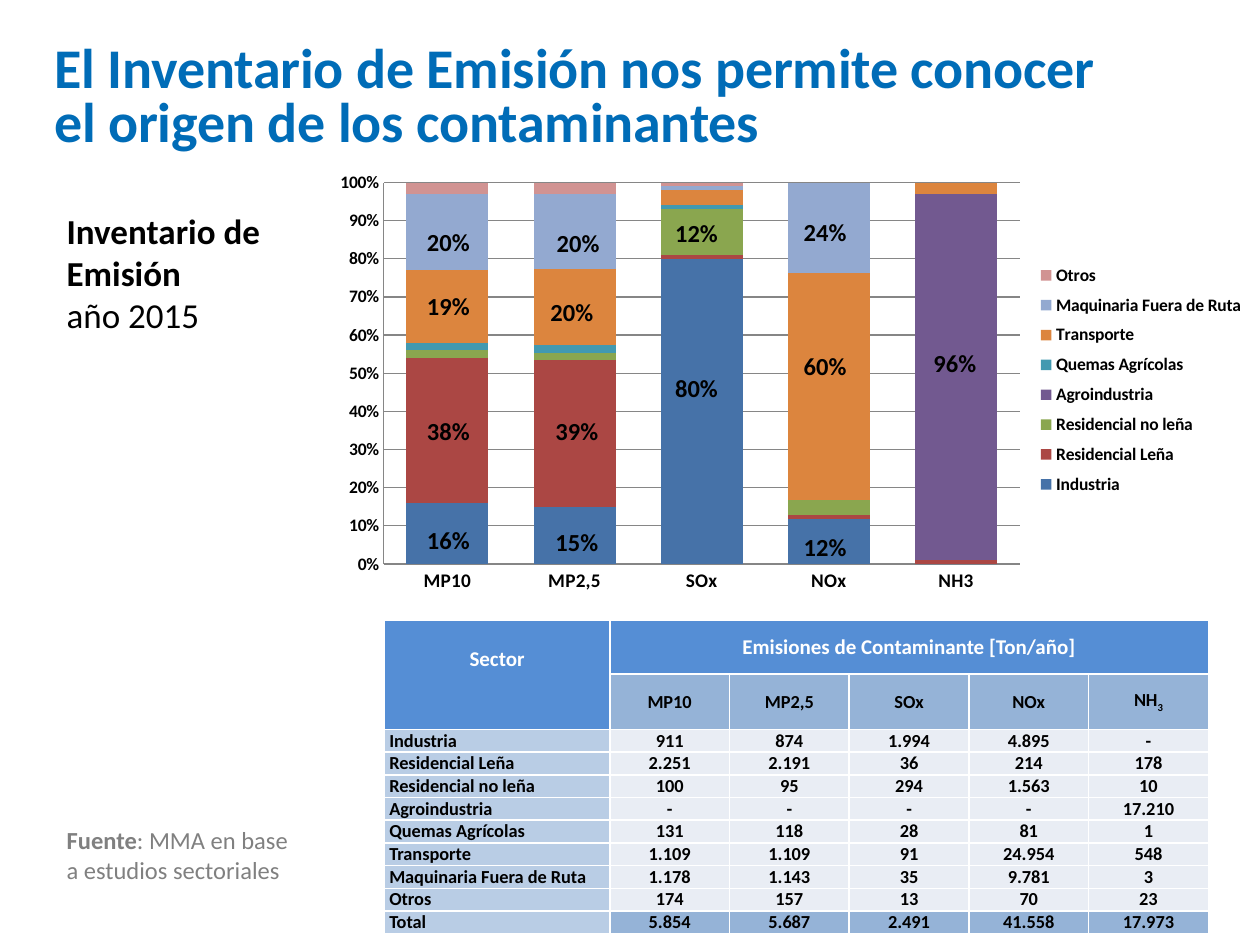
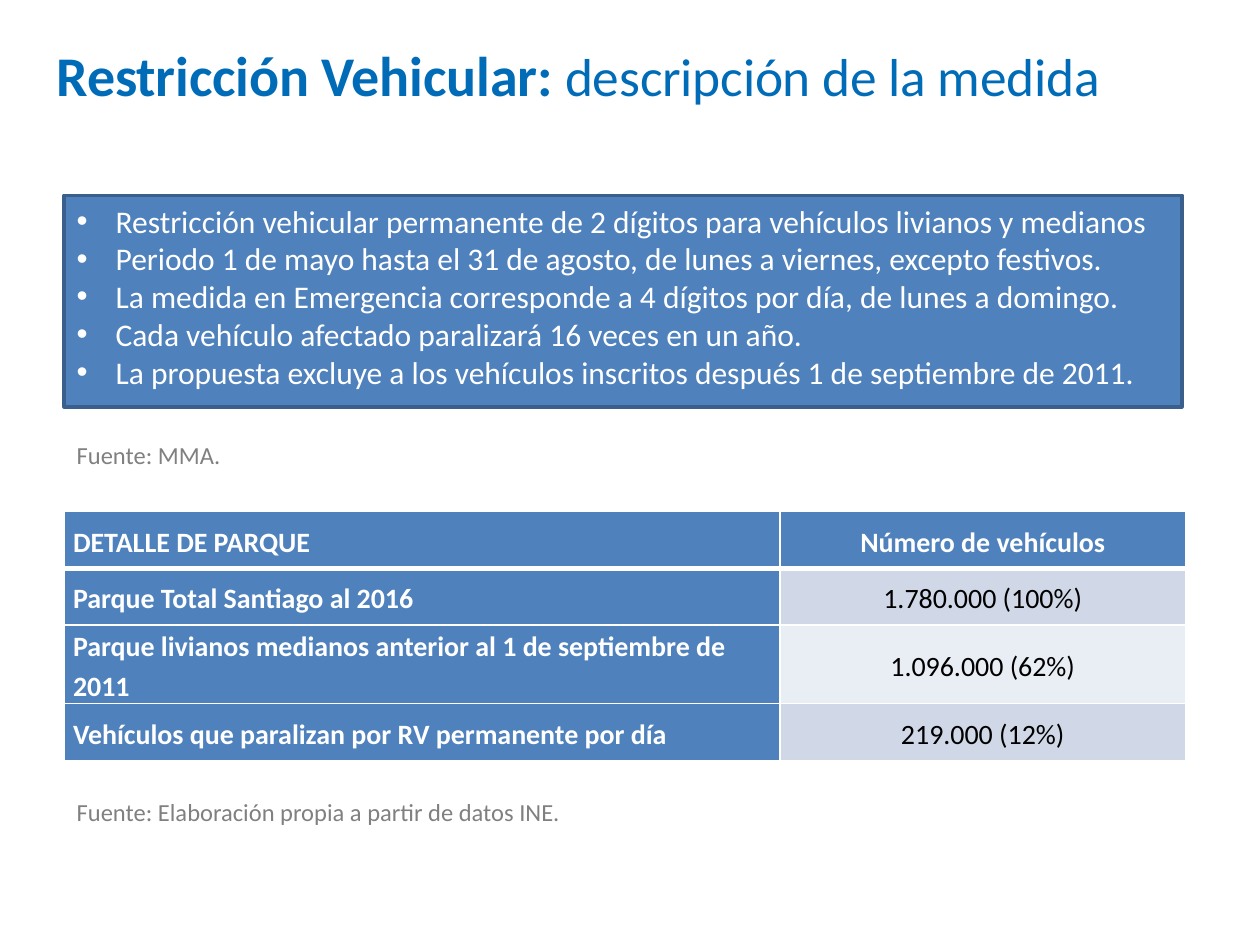
from lxml import etree
from pptx import Presentation
from pptx.chart.data import CategoryChartData
from pptx.dml.color import RGBColor
from pptx.enum import chart as ch, shapes, text
from pptx.oxml.ns import qn
from pptx.util import Inches, Pt

BLACK, WHITE, GREY, TITLE = "000000", "FFFFFF", "808080", "006CB7"
BLUE, HEAD, SUBHEAD, LABEL = "4F81BD", "558ED5", "95B3D7", "B9CDE5"
PALE, BAND, GRID, OUTLINE = "E9EDF4", "D0D8E8", "868686", "3A5F8C"
LEFT, CENTER = text.PP_ALIGN.LEFT, text.PP_ALIGN.CENTER
rgb = RGBColor.from_string


def style(f, size, color, bold=False):
    f.name, f.size, f.bold = "Calibri", Pt(size), bold
    f.color.rgb = rgb(color)


def fill_cell(c, words, fill, size, color, bold, align, side, spacing=1.0):
    c.margin_left = c.margin_right = Inches(side)
    c.margin_top = c.margin_bottom = 0
    c.vertical_anchor = text.MSO_ANCHOR.MIDDLE
    tcPr = c._tc.get_or_add_tcPr()
    for edge in ("lnL", "lnR", "lnT", "lnB"):
        ln = etree.SubElement(tcPr, qn(f"a:{edge}"), w=str(Pt(1)))
        solid = etree.SubElement(ln, qn("a:solidFill"))
        etree.SubElement(solid, qn("a:srgbClr"), val=WHITE)
    c.fill.solid()
    c.fill.fore_color.rgb = rgb(fill)
    p = c.text_frame.paragraphs[0]
    p.alignment, p.line_spacing = align, spacing
    for word in words:
        r = p.add_run()
        r.text = word
        style(r.font, size, color, bold)


prs = Presentation()
prs.slide_width, prs.slide_height = Inches(10), Inches(7.5)

titles = [
    ((0.43, 0.36, 8.32, 0.88), 0.8,
     [("El Inventario de Emisión nos permite conocer el origen de los contaminantes", 32, True)]),
    ((0.45, 0.32, 8.48, 0.54), 1.0,
     [("Restricción Vehicular: ", 32, True), ("descripción de la medida", 30.5, False)]),
]
for box, spacing, runs in titles:
    s = prs.slides.add_slide(prs.slide_layouts[5])
    sp = s.shapes.title
    sp.left, sp.top, sp.width, sp.height = map(Inches, box)
    tf = sp.text_frame
    tf.margin_left = tf.margin_right = tf.margin_top = tf.margin_bottom = 0
    tf.vertical_anchor = text.MSO_ANCHOR.TOP
    tf.auto_size = text.MSO_AUTO_SIZE.NONE
    tf.word_wrap = True
    p = tf.paragraphs[0]
    p.alignment, p.line_spacing = LEFT, spacing
    for words, size, bold in runs:
        r = p.add_run()
        r.text = words
        style(r.font, size, TITLE, bold)
        r._r.get_or_add_rPr().set("spc", "-10")
inventory, restriction = prs.slides

s = inventory
series = [
    ("Industria", (16, 15, 80, 12, 0), "4672A8"),
    ("Residencial Leña", (38, 39, 1, 1, 1), "AB4744"),
    ("Residencial no leña", (2, 2, 12, 4, 0), "8AA64F"),
    ("Agroindustria", (0, 0, 0, 0, 96), "725990"),
    ("Quemas Agrícolas", (2, 2, 1, 0, 0), "4299B0"),
    ("Transporte", (19, 20, 4, 60, 3), "DC853E"),
    ("Maquinaria Fuera de Ruta", (20, 20, 1, 24, 0), "93A9D0"),
    ("Otros", (3, 3, 1, 0, 0), "D19392"),
]
data = CategoryChartData()
data.categories = ["MP10", "MP2,5", "SOx", "NOx", "NH3"]
for name, values, color in series:
    data.add_series(name, values)
chart = s.shapes.add_chart(ch.XL_CHART_TYPE.COLUMN_STACKED_100, Inches(2.58), Inches(1.02),
                           Inches(7.4), Inches(3.73), data).chart
style(chart.font, 10, BLACK, True)
chart.has_title = False
plot = chart.plots[0]
plot.gap_width, plot.overlap, plot.vary_by_categories = 55, 100, False
for ser, (name, values, color) in zip(plot.series, series):
    ser.format.fill.solid()
    ser.format.fill.fore_color.rgb = rgb(color)
for axis, size in ((chart.category_axis, 11), (chart.value_axis, 10)):
    axis.major_tick_mark = axis.minor_tick_mark = ch.XL_TICK_MARK.NONE
    axis.format.line.color.rgb = rgb(GRID)
    style(axis.tick_labels.font, size, BLACK, True)
axis.has_major_gridlines = True
axis.major_gridlines.format.line.color.rgb = rgb(GRID)
axis.tick_labels.number_format = "0%"
axis.tick_labels.number_format_is_linked = False
chart.has_legend = True
chart.legend.position = ch.XL_LEGEND_POSITION.RIGHT
chart.legend.include_in_layout = False
style(chart.legend.font, 10, BLACK, True)
for tag, index, box in (("plotArea", 0, (0.063, 0.115, 0.682, 0.812)),
                        ("legend", 1, (0.75, 0.27, 0.25, 0.53))):
    parent = chart._chartSpace.find(".//" + qn(f"c:{tag}"))
    for old in parent.findall(qn("c:layout")):
        parent.remove(old)
    layout = etree.Element(qn("c:layout"))
    manual = etree.SubElement(layout, qn("c:manualLayout"))
    if tag == "plotArea":
        etree.SubElement(manual, qn("c:layoutTarget"), val="inner")
    for key in ("xMode", "yMode"):
        etree.SubElement(manual, qn(f"c:{key}"), val="edge")
    for key, value in zip("xywh", box):
        etree.SubElement(manual, qn(f"c:{key}"), val=str(value))
    parent.insert(index, layout)

shares = [
    ("20%", 3.29, 1.75), ("20%", 4.32, 1.76), ("19%", 3.29, 2.26), ("20%", 4.27, 2.31),
    ("38%", 3.29, 3.25), ("39%", 4.31, 3.25), ("16%", 3.29, 4.12), ("15%", 4.31, 4.13),
    ("12%", 5.26, 1.68), ("80%", 5.26, 2.91), ("24%", 6.28, 1.67), ("60%", 6.28, 2.74),
    ("12%", 6.28, 4.17), ("96%", 7.31, 2.71),
]
for share, x, y in shares:
    tf = s.shapes.add_textbox(Inches(x), Inches(y), Inches(0.55), Inches(0.34)).text_frame
    tf.word_wrap = False
    tf.text = share
    style(tf.paragraphs[0].runs[0].font, 14, BLACK, True)

emissions = [
    ("Industria", "911", "874", "1.994", "4.895", "-"),
    ("Residencial Leña", "2.251", "2.191", "36", "214", "178"),
    ("Residencial no leña", "100", "95", "294", "1.563", "10"),
    ("Agroindustria", "-", "-", "-", "-", "17.210"),
    ("Quemas Agrícolas", "131", "118", "28", "81", "1"),
    ("Transporte", "1.109", "1.109", "91", "24.954", "548"),
    ("Maquinaria Fuera de Ruta", "1.178", "1.143", "35", "9.781", "3"),
    ("Otros", "174", "157", "13", "70", "23"),
    ("Total", "5.854", "5.687", "2.491", "41.558", "17.973"),
]
t = s.shapes.add_table(11, 6, Inches(3.05), Inches(4.92), Inches(6.54), Inches(2.49)).table
t.first_row = t.horz_banding = False
for i, col in enumerate(t.columns):
    col.width = Inches(0.95 if i else 1.79)
for i, row in enumerate(t.rows):
    row.height = Inches((0.43, 0.44)[i] if i < 2 else 0.18)
for i in range(6):
    words = ["Sector"] if i == 0 else ["Emisiones de Contaminante [Ton/año]"] if i == 1 else []
    fill_cell(t.cell(0, i), words, HEAD, 12, WHITE, True, CENTER, 0.01)
fill_cell(t.cell(1, 0), [], HEAD, 12, WHITE, True, CENTER, 0.01)
t.cell(0, 0).merge(t.cell(1, 0))
t.cell(0, 0).margin_bottom = Inches(0.24)
t.cell(0, 1).merge(t.cell(0, 5))
for i, words in enumerate((["MP10"], ["MP2,5"], ["SOx"], ["NOx"], ["NH", "3"]), 1):
    fill_cell(t.cell(1, i), words, SUBHEAD, 10.5, BLACK, True, CENTER, 0.01)
r = t.cell(1, 5).text_frame.paragraphs[0].runs[1]
r._r.get_or_add_rPr().set("baseline", "-25000")
for i, row in enumerate(emissions, 2):
    for j, value in enumerate(row):
        fill = LABEL if j == 0 else SUBHEAD if row[0] == "Total" else PALE
        fill_cell(t.cell(i, j), [value], fill, 10.5, BLACK, True,
                  CENTER if j else LEFT, 0.01 if j else 0.04)

tf = s.shapes.add_textbox(Inches(0.43), Inches(1.61), Inches(2.05), Inches(5.52)).text_frame
tf.word_wrap = True
lines = [
    ([("Inventario de", True)], 20, BLACK),
    ([("Emisión", True)], 20, BLACK),
    ([("año 2015", False)], 20, BLACK),
    ([("Fuente", True), (": MMA en base", False)], 14, GREY),
    ([("a estudios sectoriales", False)], 14, GREY),
]
for i, (runs, size, color) in enumerate(lines):
    p = tf.add_paragraph() if i else tf.paragraphs[0]
    for words, bold in runs:
        r = p.add_run()
        r.text = words
        style(r.font, size, color, bold)
tf.paragraphs[3].space_before = Pt(280)

s = restriction
sp = s.shapes.add_shape(shapes.MSO_SHAPE.RECTANGLE, Inches(0.51), Inches(1.55),
                        Inches(8.87), Inches(1.68))
sp.shadow.inherit = False
sp.fill.solid()
sp.fill.fore_color.rgb = rgb(BLUE)
sp.line.color.rgb = rgb(OUTLINE)
sp.line.width = Pt(2)
tf = sp.text_frame
tf.vertical_anchor = text.MSO_ANCHOR.TOP
tf.word_wrap = True
measures = [
    "Restricción vehicular permanente de 2 dígitos para vehículos livianos y medianos",
    "Periodo 1 de mayo hasta el 31 de agosto, de lunes a viernes, excepto festivos.",
    "La medida en Emergencia corresponde a 4 dígitos por día, de lunes a domingo.",
    "Cada vehículo afectado paralizará 16 veces en un año.",
    "La propuesta excluye a los vehículos inscritos después 1 de septiembre de 2011.",
]
for i, measure in enumerate(measures):
    p = tf.add_paragraph() if i else tf.paragraphs[0]
    p.text = measure
    p.alignment = LEFT
    pPr = p._p.get_or_add_pPr()
    pPr.set("marL", str(Inches(0.31)))
    pPr.set("indent", str(-Inches(0.31)))
    etree.SubElement(pPr, qn("a:buFont"), typeface="Arial")
    etree.SubElement(pPr, qn("a:buChar"), char="•")
    style(p.runs[0].font, 18, WHITE)

fleet = [
    ("DETALLE DE PARQUE", "Número de vehículos", BLUE),
    ("Parque Total Santiago al 2016", "1.780.000 (100%)", BAND),
    ("Parque livianos medianos anterior al 1 de septiembre de 2011", "1.096.000 (62%)", PALE),
    ("Vehículos que paralizan por RV permanente por día", "219.000 (12%)", BAND),
]
t = s.shapes.add_table(4, 2, Inches(0.51), Inches(4.06), Inches(8.9), Inches(1.97)).table
t.first_row = t.horz_banding = False
t.columns[0].width, t.columns[1].width = Inches(5.68), Inches(3.22)
for i, (label, count, fill) in enumerate(fleet):
    t.rows[i].height = Inches(0.62 if i == 2 else 0.45)
    fill_cell(t.cell(i, 0), [label], BLUE, 16, WHITE, True, LEFT, 0.07, 1.15)
    fill_cell(t.cell(i, 1), [count], fill, 16, BLACK if i else WHITE, i == 0, CENTER, 0.07, 1.15)
for row, edge in ((0, "lnB"), (1, "lnT")):
    for c in t.rows[row].cells:
        c._tc.tcPr.find(qn(f"a:{edge}")).set("w", str(Pt(3)))

for source, y, width in (("Fuente: MMA.", 3.44, 1.35),
                         ("Fuente: Elaboración propia a partir de datos INE.", 6.27, 4.08)):
    tf = s.shapes.add_textbox(Inches(0.51), Inches(y), Inches(width), Inches(0.34)).text_frame
    tf.word_wrap = False
    tf.vertical_anchor = text.MSO_ANCHOR.MIDDLE
    tf.text = source
    style(tf.paragraphs[0].runs[0].font, 14, GREY)

prs.save("out.pptx")
